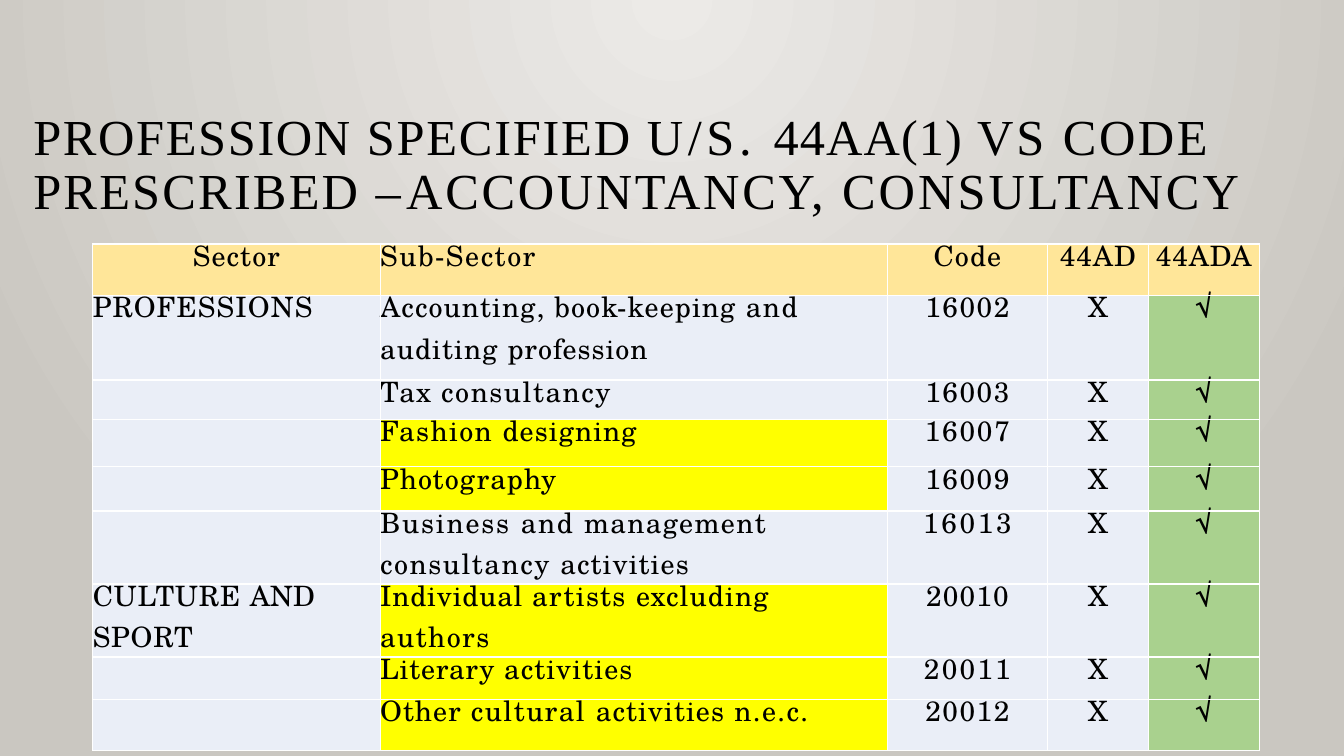
from pptx import Presentation
from pptx.dml.color import RGBColor
from pptx.enum.text import MSO_ANCHOR, MSO_AUTO_SIZE, PP_ALIGN
from pptx.oxml import parse_xml
from pptx.oxml.ns import nsdecls
from pptx.util import Inches, Pt

# Content: each line of text is a list of (words, letter spacing in points)
TITLE = [("PROFESSION ", 1.2), ("SPECIFIED ", 1.3), ("U/S. ", 3.3), ("44AA(1) ", 0.8),
         ("VS ", 2.1), ("CODE ", 1.8), ("PRESCRIBED ", 1.6), ("– ", -5.2),
         ("ACCOUNTANCY, ", 1.9), ("CONSULTANCY", 2.2)]
HEADER = [("Sector", 0.8), ("Sub-Sector", 1.1), ("Code", 0.8), ("44AD", 0.7), ("44ADA", 0.6)]

# Sector lines, sub-sector lines, code, sub-sector highlighted, row height
PROFESSIONS = [
    ([[("PROFESSIONS", 0.8)]],
     [[("Accounting, book-keeping ", 0.8), ("and", 1.1)],
      [("auditing ", 0.8), ("profession", 0.7)]], ("16002", 1.1), False, 0.84),
    ([], [[("Tax ", 0.8), ("consultancy", 1.1)]], ("16003", 1.1), False, 0.39),
    ([], [[("Fashion ", 1), ("designing", 0.8)]], ("16007", 1.3), True, 0.47),
    ([], [[("Photography", 0.8)]], ("16009", 1.1), True, 0.44),
    ([], [[("Business ", 1.3), ("and ", 1.2), ("management", 1)],
          [("consultancy ", 1.1), ("activities", 0.8)]], ("16013", 1.9), False, 0.68),
    ([[("CULTURE ", 0.6), ("AND", 0.1)], [("SPORT", 0.6)]],
     [[("Individual ", 0.6), ("artists ", 1), ("excluding", 0.8)],
      [("authors", 1.1)]], ("20010", 0.8), True, 0.68),
    ([], [[("Literary ", 0.6), ("activities", 0.8)]], ("20011", 1.6), True, 0.42),
    ([], [[("Other ", 0.8), ("cultural ", 1.1), ("activities ", 0.8), ("n.e.c.", 1)]],
     ("20012", 1.1), True, 0.51),
]
NOT_ALLOWED, ALLOWED = ("X", 0), ("√", 0)

COLORS = {"ink": "000000", "header": "FFE699", "plain": "EAEEF7", "marked": "FFFF00",
          "allowed": "A9D18E", "border": "FFFFFF", "center": "ECEAE7", "edge": "CAC7C1"}
TITLE_FONT = {"name": "Times New Roman", "size": Pt(36), "bold": False}
CELL_FONT = {"name": "TeX Gyre Schola", "size": Pt(20), "bold": False}
NO_MARGINS = dict.fromkeys(("margin_left", "margin_top", "margin_right", "margin_bottom"), 0)

# Grid in inches
TITLE_BOX = (0.33, 0.88, 12.42, 1.31)
TABLE_LEFT, TABLE_TOP = 0.92, 2.42
COLUMNS = (2.85, 5.03, 1.59, 1, 1.1)
HEADER_HEIGHT = 0.51
CENTERED = {"header": (0, 2, 3, 4), "body": (2, 3, 4)}


def assign(target, values):
    for name, value in values.items():
        setattr(target, name, value)


def write_line(para, line, font, align, spacing):
    assign(para, {"alignment": align, "line_spacing": spacing, "space_before": Pt(0)})
    for words, tracking in line:
        span = para.add_run()
        span.text = words
        assign(span.font, font)
        span.font.color.rgb = RGBColor.from_string(COLORS["ink"])
        span._r.get_or_add_rPr().set("spc", str(round(tracking * 100)))


def border_cell(cell):
    properties = cell._tc.get_or_add_tcPr()
    for side in ("lnL", "lnR", "lnT", "lnB"):
        properties.append(parse_xml(
            f'<a:{side} {nsdecls("a")} w="{Pt(1)}"><a:solidFill>'
            f'<a:srgbClr val="{COLORS["border"]}"/></a:solidFill></a:{side}>'))


def fill_cell(cell, lines, color, align):
    assign(cell, NO_MARGINS)
    border_cell(cell)
    cell.fill.solid()
    cell.fill.fore_color.rgb = RGBColor.from_string(COLORS[color])
    frame = cell.text_frame
    for index, line in enumerate(lines):
        para = frame.add_paragraph() if index else frame.paragraphs[0]
        write_line(para, line, CELL_FONT, align, None if index else Pt(22.7))


def set_background(page):
    stops = "".join(f'<a:gs pos="{position}"><a:srgbClr val="{COLORS[name]}"/></a:gs>'
                    for position, name in ((0, "center"), (100000, "edge")))
    page._element.cSld.insert(0, parse_xml(
        f'<p:bg {nsdecls("p", "a")}><p:bgPr><a:gradFill rotWithShape="1">'
        f'<a:gsLst>{stops}</a:gsLst><a:path path="circle">'
        '<a:fillToRect l="43000" t="0" r="43000" b="100000"/></a:path>'
        '</a:gradFill><a:effectLst/></p:bgPr></p:bg>'))


def add_title(page):
    title = page.shapes.title
    assign(title, dict(zip(("left", "top", "width", "height"), map(Inches, TITLE_BOX))))
    frame = title.text_frame
    assign(frame, {**NO_MARGINS, "margin_top": Inches(0.22), "word_wrap": True,
                   "auto_size": MSO_AUTO_SIZE.NONE, "vertical_anchor": MSO_ANCHOR.TOP})
    write_line(frame.paragraphs[0], TITLE, TITLE_FONT, PP_ALIGN.LEFT, Pt(38.9))


def add_profession_table(page):
    heights = [HEADER_HEIGHT] + [row[-1] for row in PROFESSIONS]
    table = page.shapes.add_table(
        len(heights), len(COLUMNS), Inches(TABLE_LEFT), Inches(TABLE_TOP),
        Inches(sum(COLUMNS)), Inches(sum(heights))).table
    table.horz_banding = False
    for column, width in zip(table.columns, COLUMNS):
        column.width = Inches(width)
    for row, height in zip(table.rows, heights):
        row.height = Inches(height)

    rows = [("header", [[[label]] for label in HEADER], ["header"] * len(HEADER))]
    for sector, activity, code, marked, _ in PROFESSIONS:
        rows.append(("body", [sector, activity, [[code]], [[NOT_ALLOWED]], [[ALLOWED]]],
                     ["plain", "marked" if marked else "plain", "plain", "plain", "allowed"]))
    for row, (kind, texts, fills) in enumerate(rows):
        for column, (lines, color) in enumerate(zip(texts, fills)):
            align = PP_ALIGN.CENTER if column in CENTERED[kind] else PP_ALIGN.LEFT
            fill_cell(table.cell(row, column), lines, color, align)


def main():
    deck = Presentation()
    deck.slide_width, deck.slide_height = Inches(13.33), Inches(7.5)
    page = deck.slides.add_slide(deck.slide_layouts[5])
    set_background(page)
    add_title(page)
    add_profession_table(page)
    deck.save("out.pptx")


if __name__ == "__main__":
    main()
